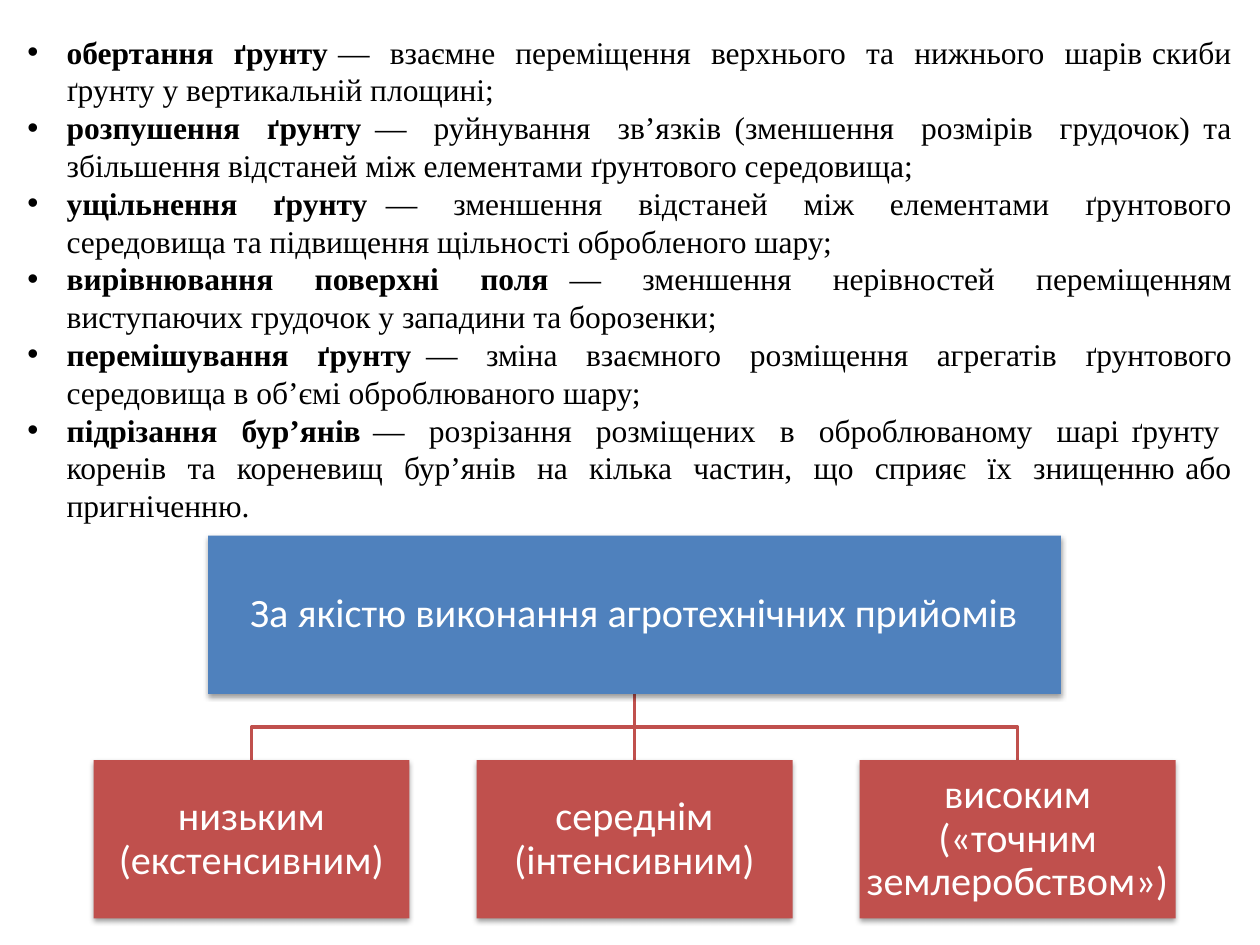
from pptx import Presentation, util as u
from pptx.dml.color import RGBColor
from pptx.enum import shapes, text
from pptx.oxml import parse_xml
from pptx.oxml.ns import nsdecls
from lxml import etree

Pt = u.Pt
COLORS = {"ink": "000000", "paper": "FFFFFF", "root": "4F81BD", "branch": "C0504D"}


def color(name):
    return RGBColor.from_string(COLORS[name])


def write(para, words, font="Calibri", size=23, bold=False, ink="paper"):
    span = para.add_run()
    span.text = words
    span.font.name = font
    span.font.size = Pt(size)
    span.font.bold = bold
    span.font.color.rgb = color(ink)


deck = Presentation()
deck.slide_width, deck.slide_height = Pt(720), Pt(540)
page = deck.slides.add_slide(deck.slide_layouts[6])

# Bulleted definitions: term, explanation
definitions = [
    ("обертання  ґрунту ",
     "—  взаємне  переміщення  верхнього  та  нижнього  шарів скиби "
     "ґрунту у вертикальній площині; "),
    ("розпушення  ґрунту ",
     "—  руйнування  зв’язків (зменшення  розмірів  грудочок) та "
     "збільшення відстаней між елементами ґрунтового середовища; "),
    ("ущільнення  ґрунту ",
     "—  зменшення  відстаней  між  елементами  ґрунтового "
     "середовища та підвищення щільності обробленого шару; "),
    ("вирівнювання  поверхні  поля ",
     "—  зменшення  нерівностей  переміщенням "
     "виступаючих грудочок у западини та борозенки; "),
    ("перемішування  ґрунту ",
     "—  зміна  взаємного  розміщення  агрегатів  ґрунтового "
     "середовища в об’ємі оброблюваного шару; "),
    ("підрізання  бур’янів ",
     "—  розрізання  розміщених  в  оброблюваному  шарі ґрунту  "
     "коренів  та  кореневищ  бур’янів  на  кілька  частин,  що  сприяє  їх  "
     "знищенню або пригніченню."),
]
box = page.shapes.add_textbox(Pt(8.5), Pt(15.1), Pt(702.8), Pt(290.9))
frame = box.text_frame
frame.word_wrap = True
frame.auto_size = text.MSO_AUTO_SIZE.SHAPE_TO_FIT_TEXT
for index, (term, meaning) in enumerate(definitions):
    para = frame.paragraphs[0] if index == 0 else frame.add_paragraph()
    para.alignment = text.PP_ALIGN.JUSTIFY
    write(para, term, font="Times New Roman", size=18, bold=True, ink="ink")
    write(para, meaning, font="Times New Roman", size=18, ink="ink")
    layout = para._p.get_or_add_pPr()
    layout.set("marL", str(Pt(22.5)))
    layout.set("indent", str(-Pt(22.5)))
    layout.append(parse_xml(f'<a:buFont {nsdecls("a")} typeface="Arial"/>'))
    layout.append(parse_xml(f'<a:buChar {nsdecls("a")} char="•"/>'))

# Hierarchy grid
box_height, root_top, branch_top = 90.5, 306, 434.3
branch_left, branch_width, branch_step = 53.5, 180.5, 218.9
root_width = 487.4
root_bottom = root_top + box_height
fork = (root_bottom + branch_top) / 2
branch_names = ["низьким (екстенсивним)", "середнім (інтенсивним)",
                "високим («точним землеробством»)"]
lefts = [branch_left + i * branch_step for i in range(len(branch_names))]
centers = [left + branch_width / 2 for left in lefts]
middle = centers[1]

# Links from root to branches
for center in centers:
    if center == middle:
        link = page.shapes.add_connector(shapes.MSO_CONNECTOR.STRAIGHT, Pt(middle),
                                         Pt(root_bottom), Pt(middle), Pt(branch_top))
        etree.SubElement(link._element.spPr, "{http://schemas.openxmlformats.org/drawingml/2006/main}effectLst")
    else:
        outline = page.shapes.build_freeform(Pt(middle), Pt(root_bottom))
        outline.add_line_segments([(Pt(middle), Pt(fork)), (Pt(center), Pt(fork)),
                                   (Pt(center), Pt(branch_top))], close=False)
        link = outline.convert_to_shape()
        link.fill.background()
        link.shadow.inherit = False
    link.line.color.rgb = color("branch")
    link.line.width = Pt(2)

# Root and branch boxes
nodes = [("За якістю виконання агротехнічних прийомів", middle - root_width / 2,
          root_top, root_width, "root")]
nodes += [(name, left, branch_top, branch_width, "branch")
          for name, left in zip(branch_names, lefts)]
for name, left, top, width, fill in nodes:
    node = page.shapes.add_shape(shapes.MSO_SHAPE.RECTANGLE, Pt(left), Pt(top),
                                 Pt(width), Pt(box_height))
    node.fill.solid()
    node.fill.fore_color.rgb = color(fill)
    node.line.fill.background()
    node.shadow.inherit = False
    node._element.spPr.find("{*}effectLst").append(parse_xml(
        f'<a:outerShdw {nsdecls("a")} blurRad="{Pt(3.1)}" dist="{Pt(1.6)}" dir="5400000" '
        f'rotWithShape="0"><a:srgbClr val="{COLORS["ink"]}"><a:alpha val="38000"/>'
        '</a:srgbClr></a:outerShdw>'))
    frame = node.text_frame
    frame.word_wrap = True
    frame.vertical_anchor = text.MSO_ANCHOR.MIDDLE
    frame.margin_left = frame.margin_right = Pt(1.2)
    frame.margin_top = frame.margin_bottom = Pt(1.2)
    para = frame.paragraphs[0]
    para.alignment = text.PP_ALIGN.CENTER
    para.line_spacing = 0.9
    write(para, name)

deck.save("out.pptx")
